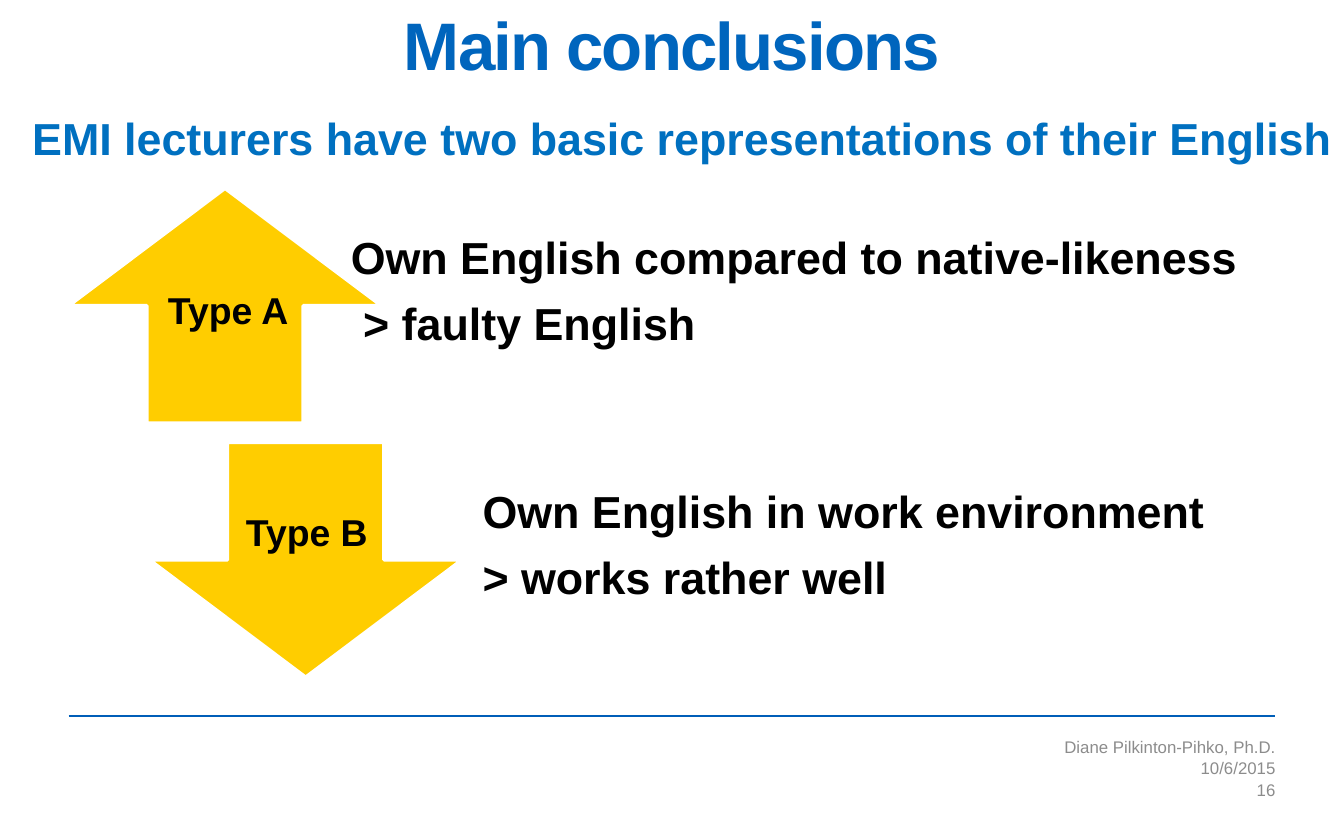
from dataclasses import dataclass

from lxml import etree
from pptx import Presentation
from pptx import util as u
from pptx.dml.color import RGBColor
from pptx.enum import shapes, text
from pptx.oxml import ns

TITLE_BLUE = RGBColor(0x00, 0x65, 0xBD)
LEAD_BLUE = RGBColor(0x00, 0x70, 0xC0)
RULE_BLUE = RGBColor(0x00, 0x5E, 0xB8)
YELLOW = RGBColor(0xFF, 0xCD, 0x00)
WHITE = RGBColor(0xFF, 0xFF, 0xFF)
BLACK = RGBColor(0x00, 0x00, 0x00)
GREY = RGBColor(0x8C, 0x8C, 0x8C)

LEFT, RIGHT = 0.51, 9.49
ARROW_WIDTH, ARROW_HEIGHT = 2.33, 1.75


@dataclass
class Conclusion:
    label: str
    label_at: tuple[float, float, float, float]
    arrow: shapes.MSO_SHAPE
    arrow_left: float
    top: float
    text_left: float
    lines: list[str]


@dataclass
class FooterLine:
    content: str
    top: float
    height: float


CONCLUSIONS = [
    Conclusion("Type A", (1.25, 2.14, 0.9, 0.34), shapes.MSO_SHAPE.UP_ARROW,
               LEFT, 1.4, 2.42,
               ["Own English compared to native-likeness", " > faulty English"]),
    Conclusion("Type B", (1.83, 3.79, 0.92, 0.34), shapes.MSO_SHAPE.DOWN_ARROW,
               1.11, 3.29, 3.4,
               ["Own English in work environment", "> works rather well"]),
]
FOOTER = [
    FooterLine("Diane Pilkinton-Pihko, Ph.D.", 5.49, 0.14),
    FooterLine("10/6/2015", 5.63, 0.17),
    FooterLine("16", 5.8, 0.15),
]


def place(box, left: float, top: float, width: float, height: float) -> None:
    box.left, box.top = u.Inches(left), u.Inches(top)
    box.width, box.height = u.Inches(width), u.Inches(height)


def write(box, lines: list[str], *, size: float, color: RGBColor,
          bold: bool = True, align=text.PP_ALIGN.LEFT,
          anchor=text.MSO_ANCHOR.TOP, insets=(0, 0, 0, 0), wrap: bool = True,
          line_spacing: float = 1.0, space_after: float = 0,
          tracking: float = 0) -> None:
    """Fill a box with paragraphs that share one format."""
    frame = box.text_frame
    frame.word_wrap = wrap
    frame.auto_size = (text.MSO_AUTO_SIZE.NONE if wrap
                       else text.MSO_AUTO_SIZE.SHAPE_TO_FIT_TEXT)
    frame.vertical_anchor = anchor
    (frame.margin_left, frame.margin_top,
     frame.margin_right, frame.margin_bottom) = map(u.Inches, insets)
    for index, line in enumerate(lines):
        para = frame.add_paragraph() if index else frame.paragraphs[0]
        para.alignment = align
        para.line_spacing = line_spacing
        para.space_before = u.Pt(0)
        para.space_after = u.Pt(space_after)
        span = para.add_run()
        span.text = line
        span.font.name = "Arial"
        span.font.size = u.Pt(size)
        span.font.bold = bold
        span.font.color.rgb = color
        if tracking:
            span.font._element.set("spc", str(int(tracking * 100)))


def add_text(page, at: tuple[float, float, float, float],
             lines: list[str], **style) -> None:
    box = page.shapes.add_textbox(*map(u.Inches, at))
    write(box, lines, **style)


def add_rule(page, y: float) -> None:
    rule = page.shapes.add_connector(
        shapes.MSO_CONNECTOR.STRAIGHT,
        u.Inches(LEFT), u.Inches(y), u.Inches(RIGHT), u.Inches(y))
    rule.line.color.rgb = RULE_BLUE
    rule.line.width = u.Pt(1)
    etree.SubElement(rule._element.spPr, ns.qn("a:effectLst"))


def add_conclusion(page, item: Conclusion) -> None:
    arrow = page.shapes.add_shape(
        item.arrow, u.Inches(item.arrow_left), u.Inches(item.top),
        u.Inches(ARROW_WIDTH), u.Inches(ARROW_HEIGHT))
    arrow.shadow.inherit = False
    arrow.fill.solid()
    arrow.fill.fore_color.rgb = YELLOW
    arrow.line.color.rgb = WHITE
    arrow.line.width = u.Pt(2)
    add_text(page, (item.text_left, item.top, RIGHT - item.text_left, ARROW_HEIGHT),
             item.lines, size=24, color=BLACK, anchor=text.MSO_ANCHOR.MIDDLE,
             insets=(0.19, 0, 0.19, 0.19), line_spacing=0.9, space_after=9.5)
    add_text(page, item.label_at, [item.label], size=20, color=BLACK, wrap=False)


def main() -> None:
    deck = Presentation()
    deck.slide_width, deck.slide_height = u.Inches(10), u.Inches(6.25)
    page = deck.slides.add_slide(deck.slide_layouts[5])

    # Title and lead sentence
    add_rule(page, 5.33)
    title = page.shapes.title
    place(title, LEFT, 0.12, RIGHT - LEFT, 1.09)
    write(title, ["Main conclusions"], size=36, color=TITLE_BLUE,
          align=text.PP_ALIGN.CENTER, line_spacing=0.85, tracking=-1)
    add_text(page, (0.24, 0.82, 9.76, 0.81),
             ["EMI lecturers have two basic representations of their English"],
             size=24, color=LEAD_BLUE, wrap=False)

    # Arrows with their conclusions
    for item in CONCLUSIONS:
        add_conclusion(page, item)

    # Footer
    for line in FOOTER:
        add_text(page, (5.53, line.top, 3.96, line.height), [line.content],
                 size=9, color=GREY, bold=False, align=text.PP_ALIGN.RIGHT,
                 anchor=text.MSO_ANCHOR.MIDDLE, insets=(0.1, 0.05, 0, 0.05))

    deck.save("out.pptx")


if __name__ == "__main__":
    main()
